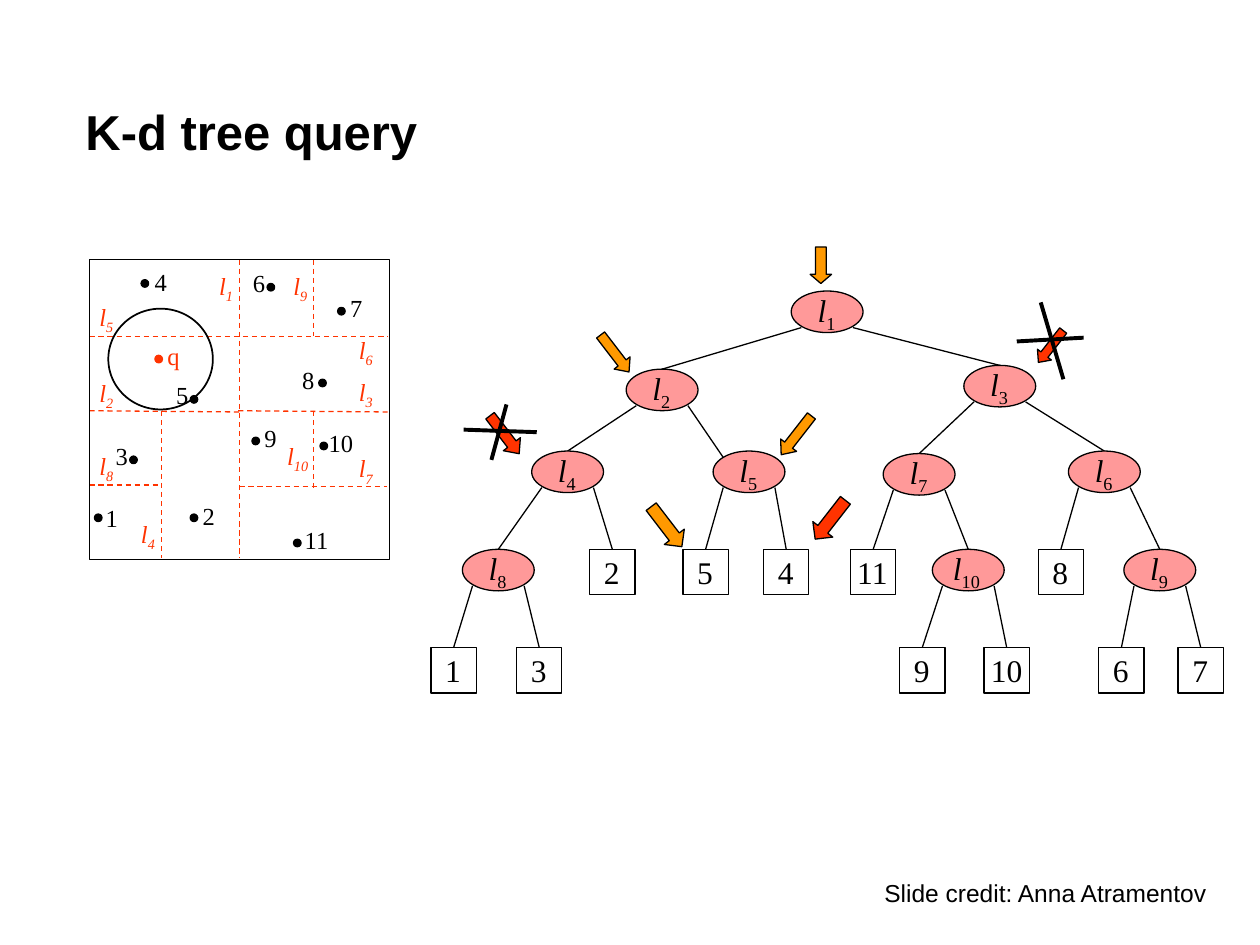
import pptx
import pptx.dml.color
import pptx.enum.dml
import pptx.enum.shapes
import pptx.enum.text
import pptx.oxml.ns
import pptx.util
from lxml import etree
from pptx.util import Inches

RGB = pptx.dml.color.RGBColor
BLACK = RGB(0x00, 0x00, 0x00)
RED = RGB(0xFF, 0x33, 0x00)
ORANGE = RGB(0xFF, 0x99, 0x00)
PINK = RGB(0xFF, 0x99, 0x99)
SERIF = "Times New Roman"
SHAPE = pptx.enum.shapes.MSO_SHAPE

NODE_W, NODE_H = 0.57, 0.33
LEAF = 0.36
DOT = 0.06

SPLITS = [
    (0.71, 3.26, 1.92, 3.27), (0.71, 2.67, 3.08, 2.67), (2.49, 2.06, 2.49, 2.67),
    (1.28, 3.26, 1.28, 4.43), (1.9, 3.86, 3.07, 3.86), (2.49, 3.26, 2.49, 3.88),
    (0.71, 3.85, 1.28, 3.85), (1.9, 2.06, 1.9, 4.43), (1.89, 3.26, 3.1, 3.27),
]
SPLIT_LABELS = {
    "5": (0.69, 2.35), "1": (1.64, 2.1), "9": (2.23, 2.1), "6": (2.75, 2.61),
    "3": (2.75, 2.94), "10": (2.18, 3.45), "7": (2.75, 3.55), "4": (1.02, 4.07),
    "8": (0.69, 3.53), "2": (0.69, 2.95),
}
POINTS = {
    "4": (1.12, 2.22, 1.13, 2.07), "7": (2.68, 2.44, 2.68, 2.28),
    "6": (2.12, 2.25, 1.91, 2.08), "5": (1.51, 3.14, 1.3, 2.97),
    "1": (0.75, 4.08, 0.74, 3.94), "3": (1.03, 3.62, 0.82, 3.45),
    "2": (1.51, 4.08, 1.51, 3.93), "9": (2, 3.47, 2, 3.31),
    "8": (2.53, 3.01, 2.3, 2.85), "10": (2.54, 3.51, 2.51, 3.35),
    "11": (2.33, 4.28, 2.32, 4.12),
}
NODES = {
    "1": (6.28, 2.31), "2": (4.97, 2.93), "3": (7.65, 2.9), "4": (4.22, 3.58),
    "5": (5.66, 3.58), "7": (7.01, 3.6), "6": (8.48, 3.58), "8": (3.67, 4.36),
    "10": (7.4, 4.36), "9": (8.92, 4.36),
}
LEAVES = {
    "1": (3.42, 5.14), "3": (4.1, 5.14), "2": (4.68, 4.36), "5": (5.42, 4.36),
    "4": (6.06, 4.36), "11": (6.75, 4.36), "9": (7.14, 5.14), "10": (7.81, 5.14),
    "8": (8.24, 4.36), "6": (8.72, 5.14), "7": (9.35, 5.14),
}
CHILDREN = {
    "1": ("l2", "l3"), "2": ("l4", "l5"), "3": ("l7", "l6"), "4": ("l8", "2"),
    "5": ("5", "4"), "7": ("11", "l10"), "6": ("8", "l9"), "8": ("1", "3"),
    "10": ("9", "10"), "9": ("6", "7"),
}
ARROWS = [
    (6.43, 1.96, 0.17, 0.29, 0, 0.426, ORANGE),
    (4.8, 2.62, 0.16, 0.37, 322.5, 0.563, ORANGE),
    (6.24, 3.26, 0.16, 0.39, 37.9, 0.598, ORANGE),
    (5.19, 3.98, 0.2, 0.4, 322.5, 0.491, ORANGE),
    (6.49, 3.93, 0.2, 0.39, 37.9, 0.491, RED),
    (3.92, 3.26, 0.17, 0.38, 322.5, 0.558, RED),
    (8.27, 2.59, 0.14, 0.32, 37.9, 0.554, RED),
]
CROSSES = [
    (4.02, 3.21, 3.9, 3.65), (3.68, 3.41, 4.26, 3.43),
    (8.6, 2.68, 8.07, 2.71), (8.26, 2.4, 8.44, 3.01),
]


def add_shape(s, kind, x, y, w, h, fill=None, line=BLACK, width=0.75):
    """Add an outlined preset shape, unfilled unless a fill is given."""
    sp = s.shapes.add_shape(kind, Inches(x), Inches(y), Inches(w), Inches(h))
    sp.shadow.inherit = False
    if fill is None:
        sp.fill.background()
    else:
        sp.fill.solid()
        sp.fill.fore_color.rgb = fill
    sp.line.color.rgb = line
    sp.line.width = pptx.util.Pt(width)
    return sp


def add_line(s, x1, y1, x2, y2, color=BLACK, width=0.75, dashed=False):
    """Add a straight connector."""
    ln = s.shapes.add_connector(pptx.enum.shapes.MSO_CONNECTOR.STRAIGHT,
                                Inches(x1), Inches(y1), Inches(x2), Inches(y2))
    ln.line.color.rgb = color
    ln.line.width = pptx.util.Pt(width)
    if dashed:
        ln.line.dash_style = pptx.enum.dml.MSO_LINE.DASH
    etree.SubElement(ln._element.spPr, pptx.oxml.ns.qn("a:effectLst"))


def add_run(p, text, size, color=BLACK, font=SERIF, italic=False, bold=False):
    """Append one formatted run to a paragraph."""
    r = p.add_run()
    r.text = text
    r.font.size = pptx.util.Pt(size)
    r.font.name = font
    r.font.color.rgb = color
    r.font.italic = italic
    r.font.bold = bold
    return r


def add_text_box(s, x, y, w, h):
    """Add a non-wrapping text box and return its first paragraph."""
    tf = s.shapes.add_textbox(Inches(x), Inches(y), Inches(w), Inches(h)).text_frame
    tf.word_wrap = False
    tf.auto_size = pptx.enum.text.MSO_AUTO_SIZE.SHAPE_TO_FIT_TEXT
    return tf.paragraphs[0]


def add_line_name(s, index, x, y, w, h, size, color, italic_index):
    """Add an italic l with a subscript index."""
    p = add_text_box(s, x, y, w, h)
    add_run(p, "l", size, color, italic=True)
    r = add_run(p, index, size, color, italic=italic_index)
    r.font._element.set("baseline", "-25000")


def add_point(s, name, dot_x, dot_y, text_x, text_y, color=BLACK):
    """Add a dot and its label on the map."""
    add_shape(s, SHAPE.OVAL, dot_x, dot_y, DOT, DOT, color, color)
    p = add_text_box(s, text_x, text_y, 0.2 + 0.1 * len(name), 0.33)
    add_run(p, name, 14, color)


def add_map(s):
    """Draw the partitioned plane with its points and query."""
    for ends in SPLITS:
        add_line(s, *ends, color=RED, dashed=True)
    add_shape(s, SHAPE.RECTANGLE, 0.71, 2.06, 2.38, 2.38)
    for name, place in POINTS.items():
        add_point(s, name, *place)
    for index, (x, y) in SPLIT_LABELS.items():
        add_line_name(s, index, x, y, 0.26 + 0.06 * len(index), 0.33, 14, RED, True)
    add_point(s, "q", 1.23, 2.82, 1.23, 2.66, RED)
    add_shape(s, SHAPE.OVAL, 0.86, 2.45, 0.83, 0.8, width=1)


def child_anchor(name):
    """Return where an edge meets the top of a child."""
    if name == "l5":
        return 5.74, 3.63
    inner = name.startswith("l")
    x, y = NODES[name[1:]] if inner else LEAVES[name]
    return x + (NODE_W if inner else LEAF) / 2, y


def add_tree(s):
    """Draw the edges, inner nodes and leaves of the tree."""
    for index, (x, y) in NODES.items():
        add_shape(s, SHAPE.OVAL, x, y, NODE_W, NODE_H, PINK)
        w = 0.26 + 0.09 * len(index)
        add_line_name(s, index, x + (NODE_W - w) / 2, y - 0.05, w, 0.4, 18, BLACK, False)
        for child, dx in zip(CHILDREN[index], (0.08, 0.49)):
            add_line(s, x + dx, y + 0.29, *child_anchor(child))
    for name, (x, y) in LEAVES.items():
        add_shape(s, SHAPE.RECTANGLE, x, y, LEAF, LEAF)
        w = 0.21 + 0.12 * len(name)
        add_run(add_text_box(s, x + (LEAF - w) / 2, y - 0.02, w, 0.4), name, 18)


def add_visits(s):
    """Draw the search arrows and cross out the pruned branches."""
    for x, y, w, h, rotation, head, color in ARROWS:
        sp = add_shape(s, SHAPE.DOWN_ARROW, x, y, w, h, color)
        sp.rotation = rotation
        sp.adjustments[0] = 0.5
        sp.adjustments[1] = head
    for ends in CROSSES:
        add_line(s, *ends, width=2.25)


def add_title(s):
    """Add the slide title."""
    tf = s.shapes.add_textbox(Inches(0.58), Inches(0.58), Inches(8.92), Inches(0.92)).text_frame
    tf.word_wrap = True
    tf.vertical_anchor = pptx.enum.text.MSO_ANCHOR.MIDDLE
    add_run(tf.paragraphs[0], "K-d tree query", 28, font="Arial", bold=True)


def main():
    """Build and save the slide."""
    prs = pptx.Presentation()
    prs.slide_width, prs.slide_height = Inches(10), Inches(7.5)
    s = prs.slides.add_slide(prs.slide_layouts[6])
    add_title(s)
    add_map(s)
    add_tree(s)
    add_visits(s)
    p = add_text_box(s, 6.92, 6.92, 2.77, 0.33)
    add_run(p, "Slide credit: Anna Atramentov", 14, font="Arial")
    prs.save("out.pptx")


if __name__ == "__main__":
    main()
